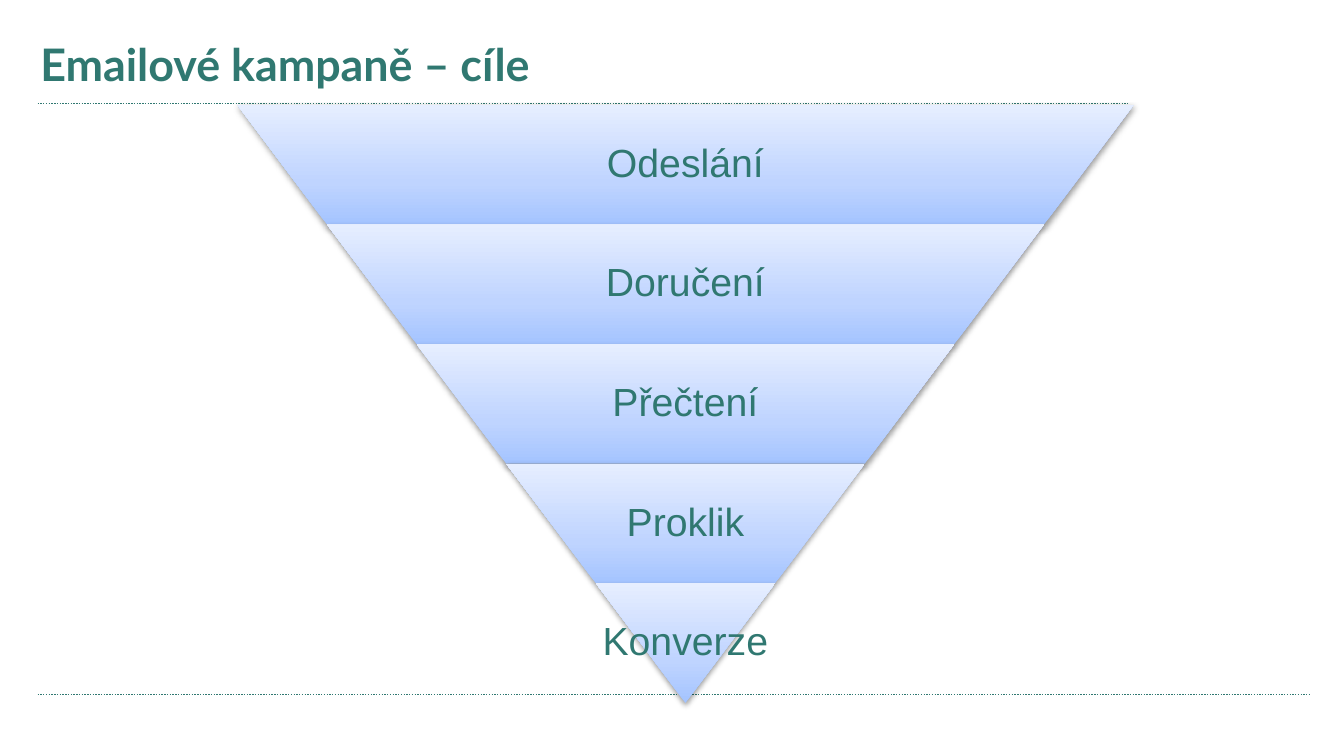
from lxml.etree import SubElement
from pptx import Presentation
from pptx.dml.color import RGBColor
from pptx.enum.dml import MSO_LINE
from pptx.enum.shapes import MSO_CONNECTOR, MSO_SHAPE
from pptx.enum.text import MSO_ANCHOR, PP_ALIGN
from pptx.oxml import parse_xml
from pptx.oxml.ns import nsdecls, qn
from pptx.util import Inches, Pt

TITLE = "Emailové kampaně – cíle"
STAGES = ["Odeslání", "Doručení", "Přečtení", "Proklik", "Konverze"]
RULES = [(0.77, 8.39), (5.17, 9.75)]  # height, right end
STOPS = [(0, "A4C4FF"), (35, "BFD4FF"), (100, "E6EEFF")]
GREEN = "307871"
MID, TOP, WIDE, HIGH = 5.1, 0.78, 6.67, 0.89


def color(code):
    return RGBColor.from_string(code)


def style(par, name, size, bold=False):
    font = par.runs[0].font
    font.name, font.size, font.bold = name, Pt(size), bold
    font.color.rgb = color(GREEN)


def add_rule(slide, y, right):
    line = slide.shapes.add_connector(
        MSO_CONNECTOR.STRAIGHT, Inches(0.28), Inches(y), Inches(right), Inches(y))
    line.line.color.rgb = color(GREEN)
    line.line.width = Pt(0.75)
    line.line.dash_style = MSO_LINE.ROUND_DOT
    SubElement(line._element.spPr, qn("a:effectLst"))


def shade(shape):
    """Give the shape an upright gradient, no outline and a soft shadow."""
    shape.line.fill.background()
    stops = "".join(f'<a:gs pos="{pos * 1000}"><a:srgbClr val="{code}"/></a:gs>'
                    for pos, code in STOPS)
    grad = parse_xml(
        f'<a:gradFill {nsdecls("a")} rotWithShape="0"><a:gsLst>{stops}</a:gsLst>'
        '<a:lin ang="16200000" scaled="0"/></a:gradFill>')
    glow = parse_xml(
        f'<a:effectLst {nsdecls("a")}><a:outerShdw blurRad="{Pt(3.1)}" '
        f'dist="{Pt(1.6)}" dir="5400000" rotWithShape="0"><a:srgbClr val="000000">'
        '<a:alpha val="38000"/></a:srgbClr></a:outerShdw></a:effectLst>')
    props = shape._element.spPr
    props.find(qn("a:ln")).addprevious(grad)
    props.append(glow)


def add_stage(slide, step, text):
    left = len(STAGES) - step
    width = WIDE * left / len(STAGES)
    top = Inches(TOP + step * HIGH)
    band = slide.shapes.add_shape(
        MSO_SHAPE.TRAPEZOID, Inches(MID - width / 2), top, Inches(width), Inches(HIGH))
    band.adjustments[0] = 0.75
    band.rotation = 180
    shade(band)

    room = width if left == 1 else width * 0.65
    box = slide.shapes.add_textbox(
        Inches(MID - room / 2), top, Inches(room), Inches(HIGH))
    frame = box.text_frame
    frame.text = text
    frame.word_wrap = True
    frame.vertical_anchor = MSO_ANCHOR.MIDDLE
    frame.margin_left = frame.margin_right = Inches(0.03)
    frame.margin_top = frame.margin_bottom = Inches(0.03)
    par = frame.paragraphs[0]
    par.alignment = PP_ALIGN.CENTER
    par.line_spacing = 0.9
    style(par, "Arial", 21)


def main():
    deck = Presentation()
    deck.slide_width = Inches(10)
    deck.slide_height = deck.slide_width * 9 // 16
    slide = deck.slides.add_slide(deck.slide_layouts[5])

    title = slide.shapes.title
    title.left, title.top = Inches(0.2), Inches(0.21)
    title.width, title.height = Inches(8.03), Inches(0.56)
    frame = title.text_frame
    frame.text = TITLE
    frame.vertical_anchor = MSO_ANCHOR.MIDDLE
    frame.margin_top, frame.margin_bottom = Inches(0.03), Inches(0.07)
    par = frame.paragraphs[0]
    par.alignment = PP_ALIGN.LEFT
    style(par, "Lato", 24, True)

    for y, right in RULES:
        add_rule(slide, y, right)
    for step, text in enumerate(STAGES):
        add_stage(slide, step, text)
    deck.save("out.pptx")


if __name__ == "__main__":
    main()
